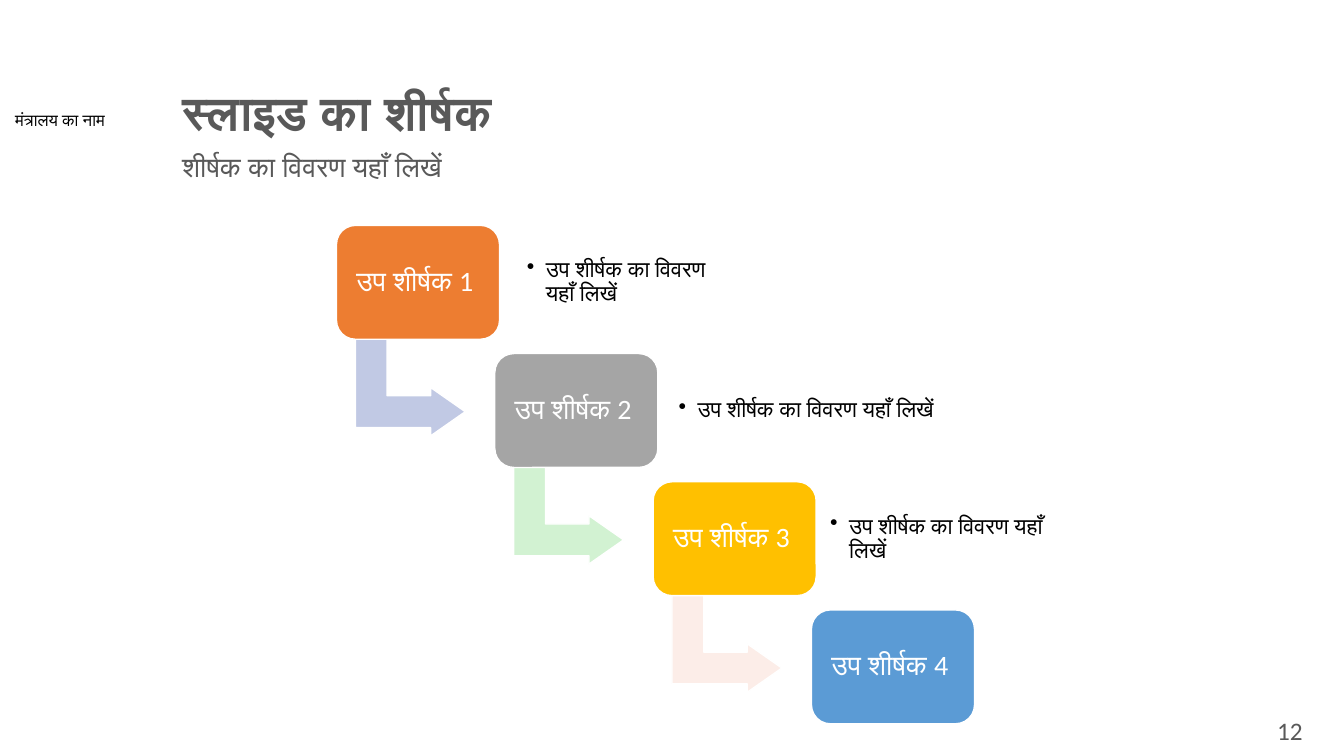
from dataclasses import dataclass

from lxml import etree
from pptx import Presentation
from pptx.dml.color import RGBColor
from pptx.enum.shapes import MSO_SHAPE
from pptx.enum.text import MSO_ANCHOR, PP_ALIGN
from pptx.oxml.ns import qn
from pptx.util import Cm, Pt

ROUNDED_BOX = MSO_SHAPE.ROUNDED_RECTANGLE
BENT_ARROW = MSO_SHAPE.BENT_UP_ARROW
TOP, MIDDLE = MSO_ANCHOR.TOP, MSO_ANCHOR.MIDDLE
LEFT, CENTER = PP_ALIGN.LEFT, PP_ALIGN.CENTER


@dataclass(frozen=True)
class Theme:
    font: str = "Calibri"
    white: str = "FFFFFF"
    black: str = "000000"
    gray: str = "595959"
    title_size: int = 34
    heading_size: int = 20
    number_size: int = 18
    note_size: int = 16
    label_size: int = 12
    box_fills: tuple = ("ED7D31", "A5A5A5", "FFC000", "5B9BD5")
    arrow_fills: tuple = ("C1C9E4", "D2F2D2", "FCEDE8")


class SlideBuilder:
    def __init__(self, slide, theme):
        self.slide = slide
        self.theme = theme

    def set_text(self, shape, text, size, color, bold=False, align=LEFT, anchor=TOP,
                 inset=None, spacing=None, bullet=False):
        frame = shape.text_frame
        frame.word_wrap = True
        frame.vertical_anchor = anchor
        if inset is not None:
            frame.margin_left = frame.margin_right = Cm(inset)
            frame.margin_top = frame.margin_bottom = Cm(inset)
        frame.text = text
        paragraph = frame.paragraphs[0]
        paragraph.alignment = align
        if spacing:
            paragraph.line_spacing = spacing
        if bullet:
            properties = paragraph._p.get_or_add_pPr()
            properties.set("marL", str(Cm(0.48)))
            properties.set("indent", str(-Cm(0.48)))
            etree.SubElement(properties, qn("a:buChar")).set("char", "•")
        font = paragraph.runs[0].font
        font.name = self.theme.font
        font.size = Pt(size)
        font.bold = bold
        font.color.rgb = RGBColor.from_string(color)

    def text(self, left, top, width, height, text, size, color, **style):
        shape = self.slide.shapes.add_textbox(Cm(left), Cm(top), Cm(width), Cm(height))
        self.set_text(shape, text, size, color, **style)

    def shape(self, kind, left, top, width, height, fill, adjustments):
        shape = self.slide.shapes.add_shape(kind, Cm(left), Cm(top), Cm(width), Cm(height))
        shape.shadow.inherit = False
        shape.fill.solid()
        shape.fill.fore_color.rgb = RGBColor.from_string(fill)
        shape.line.color.rgb = RGBColor.from_string(self.theme.white)
        shape.line.width = Pt(1)
        for index, value in enumerate(adjustments):
            shape.adjustments[index] = value
        return shape

    def step_box(self, left, top, text, fill):
        box = self.shape(ROUNDED_BOX, left, top, 4.11, 2.87, fill, [0.167])
        self.set_text(box, text, self.theme.heading_size, self.theme.white,
                      align=CENTER, anchor=MIDDLE, inset=0.34, spacing=0.9)

    def step_arrow(self, left, top, fill):
        arrow = self.shape(BENT_ARROW, left, top, 2.44, 2.77, fill, [0.328, 0.25, 0.358])
        arrow.rotation = 90

    def step_note(self, left, top, width, text):
        self.text(left, top, width, 2.34, text, self.theme.note_size, self.theme.black,
                  anchor=MIDDLE, inset=0.23, spacing=0.9, bullet=True)


def main():
    presentation = Presentation()
    presentation.slide_width = Cm(33.87)
    presentation.slide_height = Cm(19.05)
    slide = presentation.slides.add_slide(presentation.slide_layouts[6])
    theme = Theme()
    builder = SlideBuilder(slide, theme)

    builder.text(0.13, 2.64, 3.86, 0.76, "मंत्रालय का नाम", theme.label_size, theme.black)
    builder.text(4.34, 2.13, 24.41, 1.4, "स्लाइड का शीर्षक", theme.title_size, theme.gray,
                 bold=True, spacing=0.9)
    builder.text(4.34, 3.73, 24.41, 1.6, "शीर्षक का विवरण यहाँ लिखें", theme.heading_size,
                 theme.gray, spacing=0.9)

    note_widths = (5.41, 7.98, 6.65)
    for index, box_fill in enumerate(theme.box_fills):
        left = 8.48 + 3.99 * index
        top = 5.68 + 3.23 * index
        if index < len(note_widths):
            builder.step_arrow(left + 0.64, top + 2.7, theme.arrow_fills[index])
            builder.step_note(13.05 + 3.82 * index, top + 0.27, note_widths[index],
                              "उप शीर्षक का विवरण यहाँ लिखें")
        builder.step_box(left, top, f"उप शीर्षक {index + 1} ", box_fill)

    builder.text(31.14, 17.91, 2.74, 1.14, "12", theme.number_size, theme.gray, align=CENTER)
    presentation.save("out.pptx")


if __name__ == "__main__":
    main()
